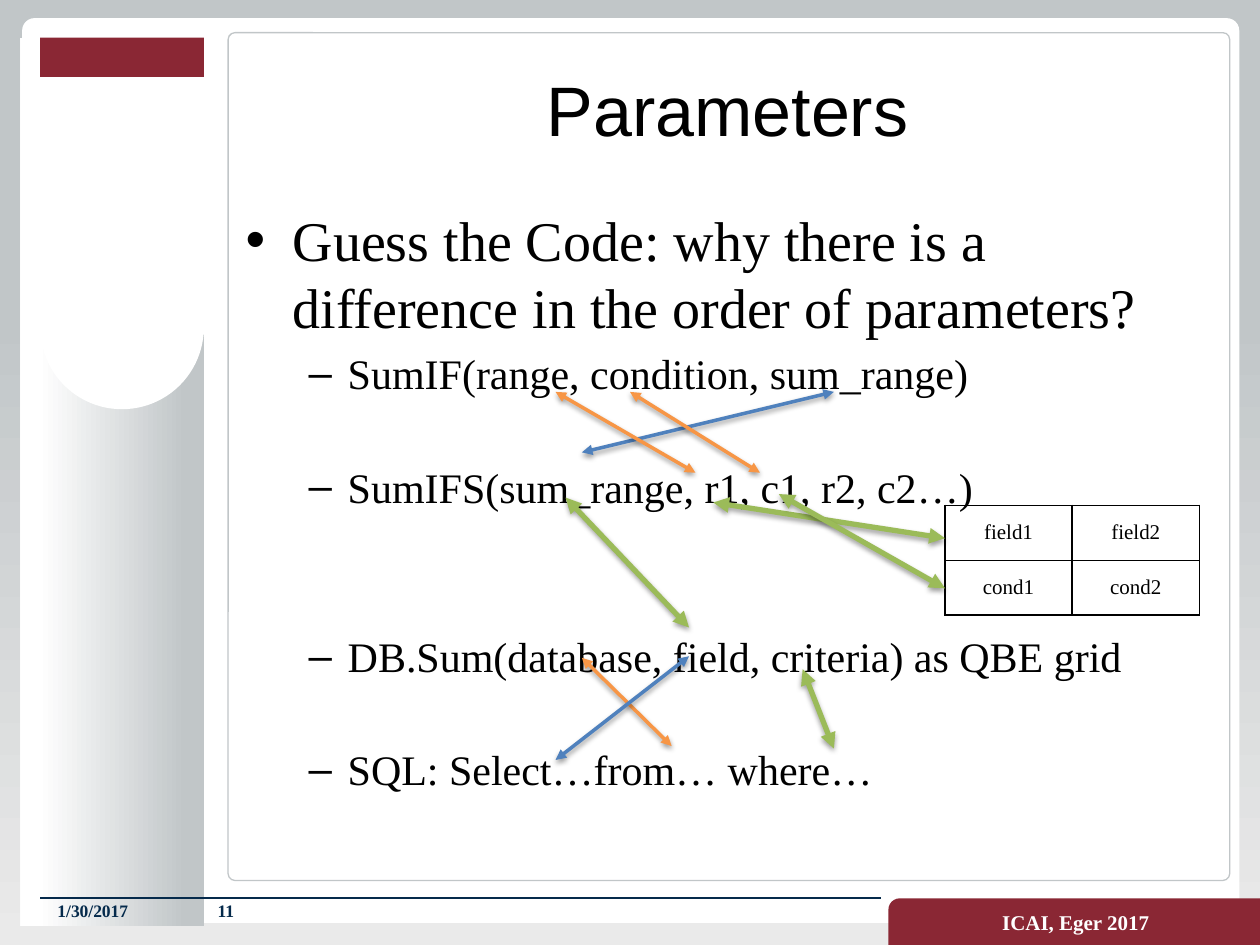
from dataclasses import dataclass

from lxml.etree import SubElement
from pptx import Presentation
from pptx.dml.color import RGBColor
from pptx.enum.shapes import MSO_CONNECTOR, MSO_SHAPE
from pptx.enum.text import MSO_ANCHOR, PP_ALIGN
from pptx.oxml.ns import qn
from pptx.util import Cm, Pt


@dataclass(frozen=True)
class Theme:
    serif: str = "Times New Roman"
    sans: str = "Arial"
    white: str = "FFFFFF"
    black: str = "000000"
    silver: str = "C1C6C8"
    mist: str = "EAEAEA"
    maroon: str = "8A2734"
    navy: str = "052A4B"
    blue: str = "4F81BD"
    orange: str = "F79646"
    green: str = "9BBB59"
    title_size: int = 40
    question_size: int = 32
    formula_size: int = 24
    label_size: int = 12
    footer_size: int = 10


THEME = Theme()

FORMULAS = [
    ("SumIF(range, condition, sum_range)", 4.5),
    ("SumIFS(sum_range, r1, c1, r2, c2…)", 36),
    ("DB.Sum(database, field, criteria) as QBE grid", 68),
    ("SQL: Select…from… where…", 36),
]
CRITERIA = [("field1", "field2"), ("cond1", "cond2")]
LINKS = [
    (THEME.blue, 2, (16.81, 7.9), (11.73, 9.12)),
    (THEME.orange, 2, (11.2, 7.9), (14.02, 9.53)),
    (THEME.orange, 2, (12.7, 7.9), (15.32, 9.53)),
    (THEME.orange, 2, (11.73, 13.26), (13.54, 15.04)),
    (THEME.blue, 2, (13.89, 13.23), (11.2, 15.32)),
    (THEME.green, 3, (16.18, 13.49), (16.81, 15.09)),
    (THEME.green, 3, (11.4, 10.03), (13.89, 12.65)),
    (THEME.green, 3, (14.38, 10.13), (19.05, 10.85)),
    (THEME.green, 3, (15.7, 9.96), (19.05, 11.86)),
]


def rgb(color):
    return RGBColor.from_string(color)


def fill_gradient(fill, angle, stops):
    fill.gradient()
    fill.gradient_angle = angle
    for stop, (position, color) in zip(fill.gradient_stops, stops):
        stop.position = position
        stop.color.rgb = rgb(color)


def add_panel(slide, preset, box, color, outline=None, rounding=None):
    panel = slide.shapes.add_shape(preset, *map(Cm, box))
    panel.shadow.inherit = False
    panel.fill.solid()
    panel.fill.fore_color.rgb = rgb(color)
    if outline:
        panel.line.color.rgb = rgb(outline)
        panel.line.width = Pt(0.75)
    else:
        panel.line.fill.background()
    if rounding is not None:
        panel.adjustments[0] = rounding
    return panel


def set_text(paragraph, text, size, color, face=THEME.serif, bold=False, align=PP_ALIGN.LEFT):
    paragraph.text = text
    paragraph.alignment = align
    font = paragraph.font
    font.name, font.size, font.bold = face, Pt(size), bold
    font.color.rgb = rgb(color)


def add_frame(slide, box, anchor=MSO_ANCHOR.MIDDLE):
    frame = slide.shapes.add_textbox(*map(Cm, box)).text_frame
    frame.word_wrap = True
    frame.vertical_anchor = anchor
    return frame


def set_bullet(paragraph, mark, left, hanging):
    properties = paragraph._p.get_or_add_pPr()
    properties.set("marL", str(Cm(left)))
    properties.set("indent", str(-Cm(hanging)))
    SubElement(properties, qn("a:buFont"), typeface=THEME.sans)
    SubElement(properties, qn("a:buChar"), char=mark)


def add_line(slide, start, end, color, width):
    line = slide.shapes.add_connector(
        MSO_CONNECTOR.STRAIGHT, *map(Cm, start), *map(Cm, end)
    )
    line.line.color.rgb = rgb(color)
    line.line.width = Pt(width)
    effects = SubElement(line._element.spPr, qn("a:effectLst"))
    return line, effects


def add_link(slide, color, width, start, end):
    link, effects = add_line(slide, start, end, color, width)
    for tip in ("a:headEnd", "a:tailEnd"):
        SubElement(link.line._get_or_add_ln(), qn(tip), type="triangle")
    shadow = SubElement(
        effects, qn("a:outerShdw"), blurRad=str(Pt(3.1)), dist=str(Pt(1.6)),
        dir="5400000", rotWithShape="0",
    )
    tint = SubElement(shadow, qn("a:srgbClr"), val=THEME.black)
    SubElement(tint, qn("a:alpha"), val="38000")


def set_borders(cell):
    properties = cell._tc.get_or_add_tcPr()
    for position, side in enumerate(("a:lnL", "a:lnR", "a:lnT", "a:lnB")):
        border = properties.makeelement(qn(side), {"w": str(Pt(1))})
        properties.insert(position, border)
        paint = SubElement(border, qn("a:solidFill"))
        SubElement(paint, qn("a:srgbClr"), val=THEME.black)


def add_criteria(slide):
    grid = slide.shapes.add_table(2, 2, Cm(19.05), Cm(10.19), Cm(5.13), Cm(2.21)).table
    for row, labels in enumerate(CRITERIA):
        for column, label in enumerate(labels):
            cell = grid.cell(row, column)
            cell.fill.background()
            cell.vertical_anchor = MSO_ANCHOR.MIDDLE
            set_text(cell.text_frame.paragraphs[0], label, THEME.label_size,
                     THEME.black, align=PP_ALIGN.CENTER)
            set_borders(cell)


def add_backdrop(slide):
    fill_gradient(slide.background.fill, 270, [(0.33, THEME.silver), (1, THEME.mist)])
    add_panel(slide, MSO_SHAPE.ROUNDED_RECTANGLE, (0.46, 0.38, 24.51, 18.21),
              THEME.white, THEME.white, 0.013)
    sidebar = add_panel(slide, MSO_SHAPE.RECTANGLE, (0.41, 0.76, 3.71, 17.91), THEME.white)
    fill_gradient(sidebar.fill, 180, [(0.1, THEME.silver), (0.9, THEME.white)])
    add_panel(slide, MSO_SHAPE.ROUNDED_RECTANGLE, (4.6, 0.66, 20.19, 17.09),
              THEME.white, THEME.silver, 0.008)
    add_panel(slide, MSO_SHAPE.RECTANGLE, (0.81, 0.76, 3.3, 5.99), THEME.white)
    add_panel(slide, MSO_SHAPE.RECTANGLE, (0.81, 0.76, 3.3, 0.79), THEME.maroon)
    add_panel(slide, MSO_SHAPE.OVAL, (0.81, 4.95, 3.3, 3.3), THEME.white)


def add_footer(slide):
    add_line(slide, (0.81, 18.11), (17.75, 18.11), THEME.navy, 1.25)
    venue = add_panel(slide, MSO_SHAPE.ROUND_1_RECTANGLE, (17.91, 18.11, 7.49, 0.94),
                      THEME.maroon, rounding=0.244)
    venue._element.spPr.xfrm.set("flipH", "1")
    venue.text_frame.vertical_anchor = MSO_ANCHOR.MIDDLE
    set_text(venue.text_frame.paragraphs[0], "ICAI, Eger 2017", THEME.label_size,
             THEME.white, bold=True, align=PP_ALIGN.CENTER)
    for text, left, width in (("11", 4.14, 0.99), ("1/30/2017", 0.91, 2.49)):
        frame = add_frame(slide, (left, 18.11, width, 0.51))
        set_text(frame.paragraphs[0], text, THEME.footer_size, THEME.navy, bold=True)


def add_content(slide):
    heading = add_frame(slide, (4.67, 0.79, 19.99, 2.79))
    set_text(heading.paragraphs[0], "Parameters", THEME.title_size, THEME.black,
             THEME.sans, align=PP_ALIGN.CENTER)
    body = add_frame(slide, (4.7, 3.89, 19.99, 13.89), MSO_ANCHOR.TOP)
    body.margin_top = Cm(0.25)
    question = body.paragraphs[0]
    set_bullet(question, "•", 0.95, 0.95)
    set_text(question,
             "Guess the Code: why there is a difference in the order of parameters?",
             THEME.question_size, THEME.black)
    for text, gap in FORMULAS:
        formula = body.add_paragraph()
        formula.level = 1
        set_bullet(formula, "–", 2.06, 0.79)
        formula.space_before = Pt(gap)
        set_text(formula, text, THEME.formula_size, THEME.black)


def main():
    deck = Presentation()
    deck.slide_width, deck.slide_height = Cm(25.4), Cm(19.05)
    slide = deck.slides.add_slide(deck.slide_layouts[6])
    add_backdrop(slide)
    add_footer(slide)
    add_content(slide)
    add_criteria(slide)
    for link in LINKS:
        add_link(slide, *link)
    deck.save("out.pptx")


if __name__ == "__main__":
    main()
